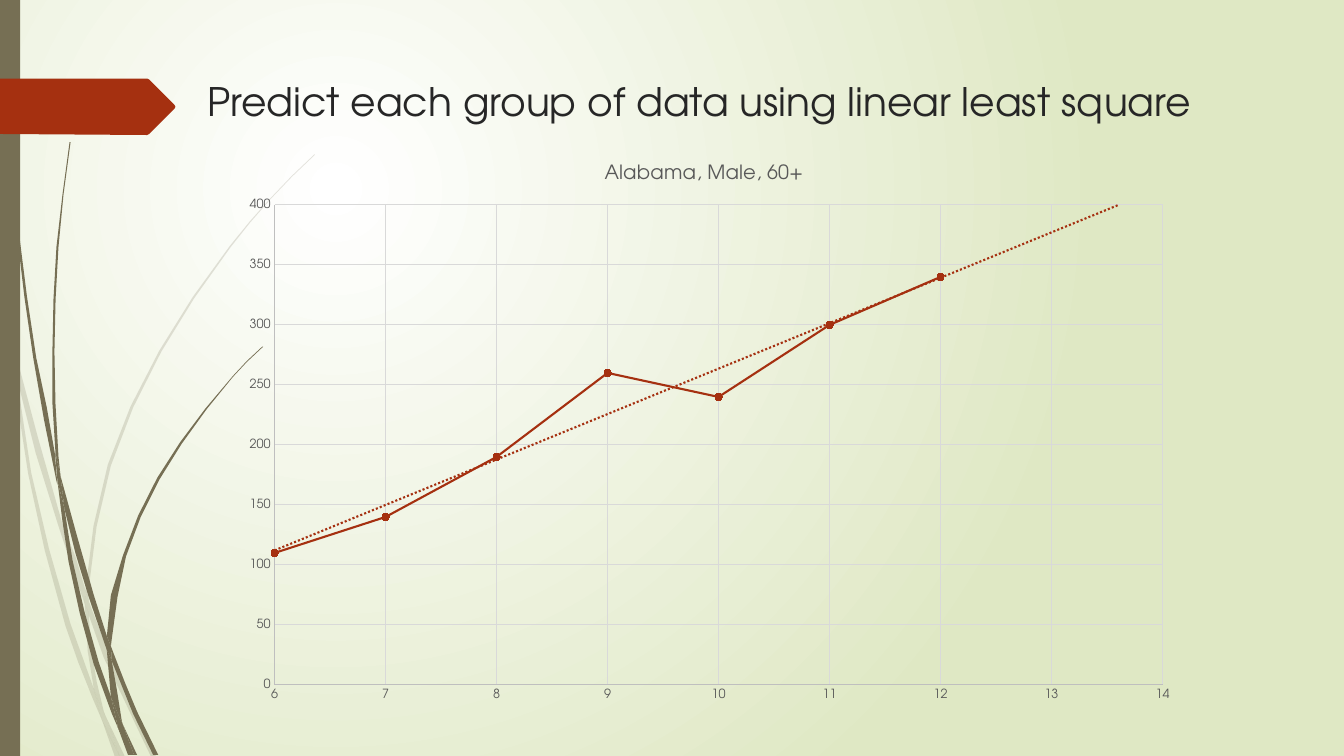
from dataclasses import dataclass
from itertools import groupby

from lxml.etree import SubElement
from pptx import Presentation
from pptx.chart.data import XyChartData
from pptx.dml.color import RGBColor
from pptx.enum.chart import XL_CHART_TYPE as ChartType, XL_MARKER_STYLE as Marker
from pptx.enum.chart import XL_TICK_MARK as Tick
from pptx.enum.shapes import MSO_SHAPE as Shape
from pptx.oxml import parse_xml
from pptx.oxml.ns import nsdecls, qn
from pptx.util import Pt

PX = 9144  # EMU in one px, 100 px to the inch


@dataclass(frozen=True)
class Theme:
    font: str = "TeX Gyre Adventor"
    white: str = "FFFFFF"
    sage: str = "DFE8C4"
    olive: str = "766F54"
    rust: str = "A53010"
    ink: str = "262626"
    label: str = "595959"
    axis: str = "BFBFBF"
    grid: str = "D9D9D9"
    title_size: int = 28
    chart_title_size: int = 14
    label_size: int = 9
    thin: float = 0.75
    thick: float = 1.5


# Outline knots of the grass blades, in px
PALE_BLADES = [
    [(11, 350), (9, 322), (0, 282), (0, 299), (10, 344)],
    [(58, 522), (84, 599), (85, 586), (62, 520), (14, 345), (17, 376)],
    [(92, 607), (88, 596), (88, 610), (123, 694), (150, 751), (155, 751), (127, 692)],
    [(119, 751), (124, 751), (105, 711)],
    [(93, 683), (70, 619), (31, 469), (17, 376), (11, 350), (28, 470), (65, 621),
     (92, 693), (101, 714), (99, 707)],
    [(84, 599), (87, 646), (93, 683), (96, 692), (105, 711), (103, 706), (91, 646),
     (88, 610), (88, 608)],
    [(88, 584), (110, 462), (160, 349), (229, 245), (268, 198), (290, 175), (312, 154),
     (312, 153), (289, 175), (268, 197), (228, 244), (158, 348), (107, 461), (85, 584),
     (85, 586), (88, 596)],
    [(101, 714), (114, 751), (119, 751)],
    [(88, 608), (88, 610), (88, 596), (85, 586), (84, 599)],
    [(96, 692), (93, 683), (99, 707), (101, 714), (119, 751), (105, 711)],
]
DARK_BLADES = [
    [(7, 110), (17, 233), (33, 355), (56, 477), (57, 481), (55, 457), (55, 453),
     (36, 355), (19, 232), (8, 109), (5, 48), (4, 0), (3, 0), (4, 48)],
    [(88, 592), (106, 645), (106, 631), (93, 590), (60, 472), (64, 505)],
    [(113, 649), (110, 641), (111, 656), (132, 708), (152, 749), (157, 749), (136, 706)],
    [(110, 691), (98, 657), (72, 556), (64, 505), (57, 477), (68, 557), (93, 659),
     (111, 708), (117, 722), (116, 717)],
    [(60, 472), (58, 453), (54, 349), (58, 245), (63, 193), (70, 141), (69, 141),
     (62, 193), (56, 245), (52, 349), (55, 449)],
    [(133, 749), (136, 749), (122, 719)],
    [(57, 477), (64, 505), (60, 472), (55, 449), (55, 453)],
    [(111, 633), (125, 552), (158, 476), (205, 406), (231, 374), (245, 359), (261, 344),
     (260, 344), (245, 358), (231, 373), (204, 405), (156, 474), (122, 551), (106, 631),
     (110, 641)],
    [(117, 722), (127, 749), (131, 749)],
    [(106, 645), (110, 691), (116, 706), (122, 719), (121, 716), (111, 656), (109, 651)],
    [(106, 645), (109, 651), (111, 656), (110, 641), (106, 631)],
    [(116, 706), (110, 691), (116, 717), (117, 722), (130, 749), (133, 749), (122, 719)],
]
ARROW = [(0, 78), (146, 78), (148, 79), (173, 104), (174, 106), (173, 108),
         (148, 133), (146, 134), (0, 133)]


def heading(before, at, after, straight):
    """Direction of the outline at a knot; sharp turns keep the straight direction."""
    arrive, leave = (at - before) / abs(at - before), (after - at) / abs(after - at)
    if (arrive * leave.conjugate()).real < 0.75:
        return straight
    return (arrive + leave) / abs(arrive + leave)


def curved(knots, long_side=60):
    """Bow the long sides of a closed outline by a point at their middle."""
    points = [complex(*knot) for knot, _ in groupby(knots)]
    count, outline = len(points), []
    for i, start in enumerate(points):
        end = points[(i + 1) % count]
        outline.append((start.real, start.imag))
        length = abs(end - start)
        if length > long_side:
            straight = (end - start) / length
            leave = heading(points[i - 1], start, end, straight)
            arrive = heading(start, end, points[(i + 2) % count], straight)
            middle = (start + end) / 2 + length / 8 * (leave - arrive)
            outline.append((middle.real, middle.imag))
    return outline


class SlideBuilder:
    def __init__(self, deck, theme):
        self.theme = theme
        self.slide = deck.slides.add_slide(deck.slide_layouts[6])

    def background(self, center, edge):
        fill = self.slide.background.fill
        fill.gradient()
        for stop, color in zip(fill.gradient_stops, (center, edge)):
            stop.color.rgb = RGBColor.from_string(color)
        gradient = self.slide.element.find(".//" + qn("a:gradFill"))
        gradient.remove(gradient.find(qn("a:lin")))
        glow = SubElement(gradient, qn("a:path"), path="circle")
        SubElement(glow, qn("a:fillToRect"), l="50000", t="50000", r="100000", b="100000")

    def paint(self, shape, color, opacity=100):
        shape.shadow.inherit = False
        shape.fill.solid()
        shape.fill.fore_color.rgb = RGBColor.from_string(color)
        shape.line.fill.background()
        if opacity < 100:
            tint = shape.element.spPr.find(".//" + qn("a:srgbClr"))
            SubElement(tint, qn("a:alpha"), val=str(opacity * 1000))

    def outline(self, points, color, opacity=100, parent=None):
        corners = [(x * PX, y * PX) for x, y in points]
        builder = (parent or self.slide).shapes.build_freeform(*corners[0], scale=1.0)
        builder.add_line_segments(corners[1:], close=True)
        self.paint(builder.convert_to_shape(), color, opacity)

    def grass(self, blades, color, opacity=100):
        tuft = self.slide.shapes.add_group_shape()
        for blade in blades:
            self.outline(curved(blade), color, opacity, tuft)

    def bar(self, box, color):
        place = [length * PX for length in box]
        self.paint(self.slide.shapes.add_shape(Shape.RECTANGLE, *place), color)

    def style(self, font, size, color):
        font.name, font.size, font.bold = self.theme.font, Pt(size), False
        font.color.rgb = RGBColor.from_string(color)

    def stroke(self, line, color, width):
        line.color.rgb = RGBColor.from_string(color)
        line.width = Pt(width)

    def heading_text(self, box, words):
        frame = self.slide.shapes.add_textbox(*[length * PX for length in box]).text_frame
        frame.word_wrap = True
        run = frame.paragraphs[0].add_run()
        run.text = words
        self.style(run.font, self.theme.title_size, self.theme.ink)

    def axis(self, axis, low, high, step):
        axis.minimum_scale, axis.maximum_scale, axis.major_unit = low, high, step
        axis.major_tick_mark = axis.minor_tick_mark = Tick.NONE
        axis.has_major_gridlines = True
        self.stroke(axis.major_gridlines.format.line, self.theme.grid, self.theme.thin)
        self.stroke(axis.format.line, self.theme.axis, self.theme.thin)
        self.style(axis.tick_labels.font, self.theme.label_size, self.theme.label)

    def trend_chart(self, box, title, points):
        theme, data = self.theme, XyChartData()
        trend_points = data.add_series("Series 1")
        for x, y in points:
            trend_points.add_data_point(x, y)
        chart = self.slide.shapes.add_chart(
            ChartType.XY_SCATTER_SMOOTH, *[length * PX for length in box], data).chart
        chart.has_legend = False
        self.style(chart.font, theme.label_size, theme.label)
        chart.has_title = True
        run = chart.chart_title.text_frame.paragraphs[0].add_run()
        run.text = title
        self.style(run.font, theme.chart_title_size, theme.label)
        self.axis(chart.category_axis, 6, 14, 1)
        self.axis(chart.value_axis, 0, 400, 50)
        chart.plots[0].vary_by_categories = False
        series = chart.plots[0].series[0]
        series.smooth = True
        self.stroke(series.format.line, theme.rust, theme.thick)
        series.marker.style, series.marker.size = Marker.CIRCLE, 5
        series.marker.format.fill.solid()
        series.marker.format.fill.fore_color.rgb = RGBColor.from_string(theme.rust)
        self.stroke(series.marker.format.line, theme.rust, theme.thin)
        series._element.find(qn("c:xVal")).addprevious(parse_xml(
            f'<c:trendline {nsdecls("c", "a")}><c:spPr><a:ln w="{Pt(theme.thick)}">'
            f'<a:solidFill><a:srgbClr val="{theme.rust}"/></a:solidFill>'
            '<a:prstDash val="sysDot"/></a:ln></c:spPr><c:trendlineType val="linear"/>'
            '<c:forward val="2"/><c:dispRSqr val="0"/><c:dispEq val="0"/></c:trendline>'))
        self.plot_layout(chart, x=0.05, y=0.11, w=0.93, h=0.84)

    def plot_layout(self, chart, **shares):
        plot_area = chart._chartSpace.find(".//" + qn("c:plotArea"))
        for layout in plot_area.findall(qn("c:layout")):
            plot_area.remove(layout)
        sides = "".join(f'<c:{side} val="{share}"/>' for side, share in shares.items())
        plot_area.insert(0, parse_xml(
            f'<c:layout {nsdecls("c")}><c:manualLayout><c:layoutTarget val="inner"/>'
            f'<c:xMode val="edge"/><c:yMode val="edge"/>{sides}</c:manualLayout></c:layout>'))


def main():
    deck, theme = Presentation(), Theme()
    deck.slide_width, deck.slide_height = 1333 * PX, 750 * PX
    page = SlideBuilder(deck, theme)
    page.background(theme.white, theme.sage)
    page.grass(PALE_BLADES, theme.olive, 20)
    page.grass(DARK_BLADES, theme.olive)
    page.bar((0, 0, 20, 750), theme.olive)
    page.outline(ARROW, theme.rust)
    page.heading_text((196, 72, 1036, 140),
                      "Predict each group of data using linear least square")
    page.trend_chart((225, 141, 947, 567), "Alabama, Male, 60+",
                     zip(range(6, 13), (110, 140, 190, 260, 240, 300, 340)))
    deck.save("out.pptx")


if __name__ == "__main__":
    main()
